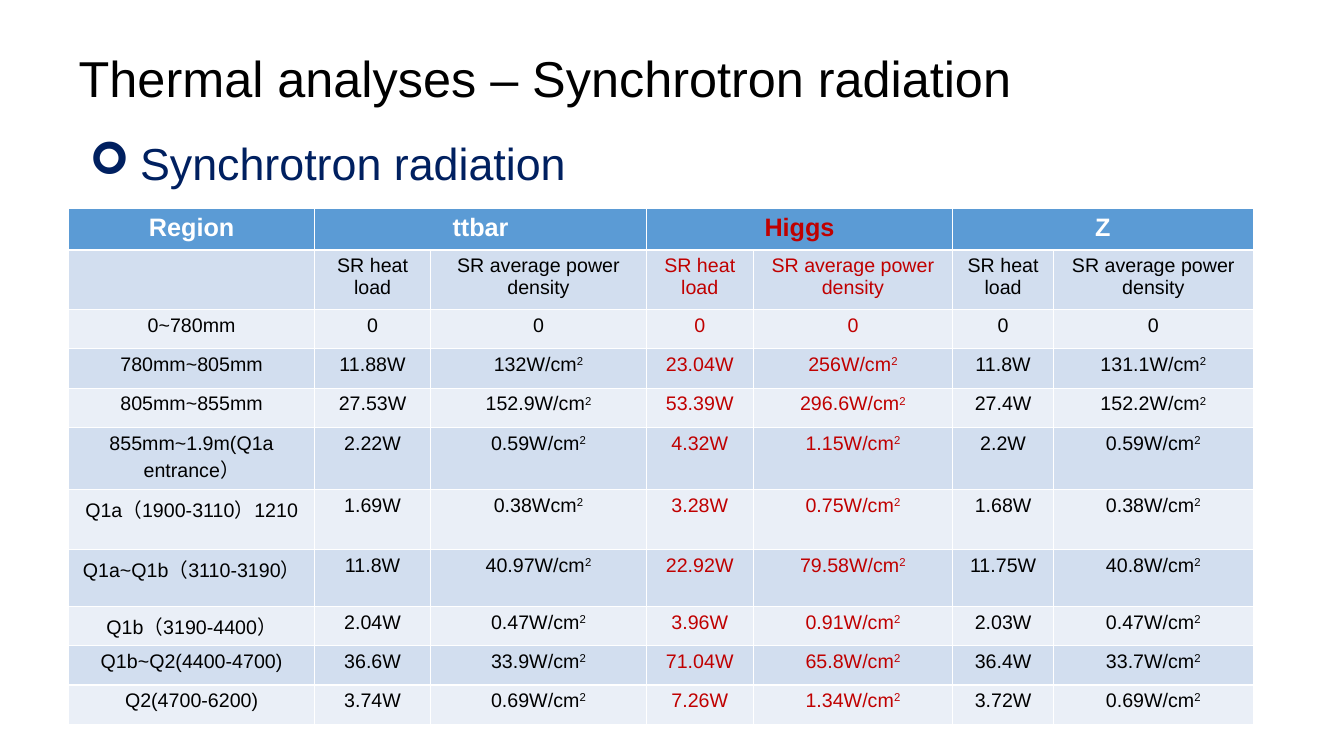
from lxml import etree
from pptx import Presentation
from pptx.dml.color import RGBColor
from pptx.enum.text import MSO_ANCHOR, MSO_AUTO_SIZE, PP_ALIGN
from pptx.oxml.ns import qn
from pptx.util import Cm, Pt

LEFT, CENTER = PP_ALIGN.LEFT, PP_ALIGN.CENTER
TOP, MIDDLE = MSO_ANCHOR.TOP, MSO_ANCHOR.MIDDLE
GROW = MSO_AUTO_SIZE.SHAPE_TO_FIT_TEXT
BLACK, WHITE, RED, NAVY = "000000", "FFFFFF", "C00000", "002060"
HEAD, BANDS = "5B9BD5", ("EAEFF7", "D2DEEF")


def tint(code):
    return RGBColor.from_string(code)


def write(frame, text, size=14, color=BLACK, bold=False, align=CENTER):
    para = frame.paragraphs[0]
    para.alignment = align
    base, power, _ = text.partition("²")
    for part, lift in ((base, "0"), ("2" if power else "", "30000")):
        if part:
            run = para.add_run()
            run.text = part
            run.font.name = "Arial"
            run.font.size = Pt(size)
            run.font.bold = bold
            run.font.color.rgb = tint(color)
            run.font._element.set("baseline", lift)
    return para


deck = Presentation()
deck.slide_width, deck.slide_height = Cm(33.87), Cm(19.05)
slide = deck.slides.add_slide(deck.slide_layouts[5])

title = slide.shapes.title
title.left, title.top, title.width, title.height = Cm(1.73), Cm(1.07), Cm(30.2), Cm(1.8)
title.text_frame.vertical_anchor = TOP
title.text_frame.word_wrap = True
title.text_frame.auto_size = GROW
write(title.text_frame, "Thermal analyses – Synchrotron radiation", size=36, align=LEFT)

topic = slide.shapes.add_textbox(Cm(2.01), Cm(3.12), Cm(19.91), Cm(2.13)).text_frame
topic.word_wrap = True
topic.vertical_anchor = MIDDLE
para = write(topic, "Synchrotron radiation", size=32, color=NAVY, align=LEFT)
para.line_spacing = 0.9
props = para._p.get_or_add_pPr()
props.set("marL", str(Cm(1.27)))
props.set("indent", str(-Cm(1.27)))
etree.SubElement(props, qn("a:buFont")).set("typeface", "Wingdings")
etree.SubElement(props, qn("a:buChar")).set("char", "➢")

load, power = "SR heat load", "SR average power density"
rows = [
    ("Region", "ttbar", "", "Higgs", "", "Z", ""),
    ("", load, power, load, power, load, power),
    ("0~780mm", "0", "0", "0", "0", "0", "0"),
    ("780mm~805mm", "11.88W", "132W/cm²", "23.04W", "256W/cm²", "11.8W", "131.1W/cm²"),
    ("805mm~855mm", "27.53W", "152.9W/cm²", "53.39W", "296.6W/cm²", "27.4W", "152.2W/cm²"),
    ("855mm~1.9m(Q1a entrance）", "2.22W", "0.59W/cm²", "4.32W", "1.15W/cm²", "2.2W", "0.59W/cm²"),
    ("Q1a（1900-3110）1210", "1.69W", "0.38Wcm²", "3.28W", "0.75W/cm²", "1.68W", "0.38W/cm²"),
    ("Q1a~Q1b（3110-3190）", "11.8W", "40.97W/cm²", "22.92W", "79.58W/cm²", "11.75W", "40.8W/cm²"),
    ("Q1b（3190-4400）", "2.04W", "0.47W/cm²", "3.96W", "0.91W/cm²", "2.03W", "0.47W/cm²"),
    ("Q1b~Q2(4400-4700)", "36.6W", "33.9W/cm²", "71.04W", "65.8W/cm²", "36.4W", "33.7W/cm²"),
    ("Q2(4700-6200)", "3.74W", "0.69W/cm²", "7.26W", "1.34W/cm²", "3.72W", "0.69W/cm²"),
]
widths = (6.2, 2.92, 5.44, 2.69, 5.03, 2.54, 5.03)
heights = {0: 1.04, 1: 1.5, 5: 1.57, 6: 1.5}

frame = slide.shapes.add_table(len(rows), len(widths), Cm(1.73), Cm(5.26), Cm(29.8), Cm(12.47))
table = frame.table
for col, width in zip(table.columns, widths):
    col.width = Cm(width)
for start in (1, 3, 5):
    table.cell(0, start).merge(table.cell(0, start + 1))

for r, row in enumerate(rows):
    table.rows[r].height = Cm(heights.get(r, 0.99))
    for c, text in enumerate(row):
        cell = table.cell(r, c)
        cell.fill.solid()
        cell.fill.fore_color.rgb = tint(BANDS[r % 2] if r else HEAD)
        plain = BLACK if r else WHITE
        color = RED if c in (3, 4) else plain
        write(cell.text_frame, text, size=14 if r else 18, color=color, bold=r == 0)

deck.save("out.pptx")
